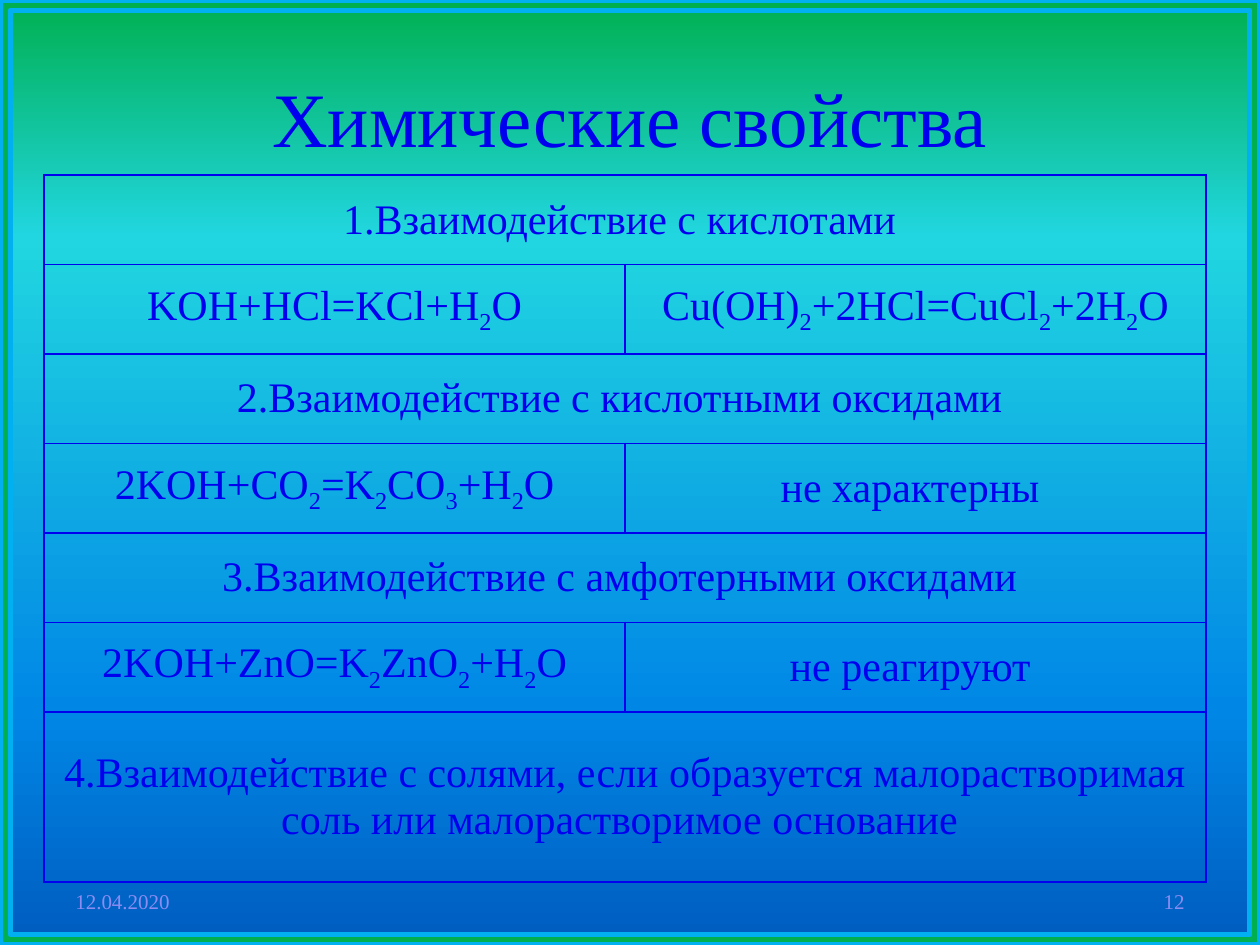
from dataclasses import dataclass

from lxml import etree
from pptx import Presentation
from pptx import util as u
from pptx.dml.color import RGBColor
from pptx.enum import shapes, text
from pptx.oxml import ns

COLORS = {"ink": "0000EE", "muted": "8C8CF2", "frame": "00B050", "edge": "00B0F0"}
GRADIENT = {0: "00B050", 25: "21D6E0", 75: "0087E6", 100: "005CBF"}
FONT = "Times New Roman"
CENTER, LEFT, RIGHT = text.PP_ALIGN.CENTER, text.PP_ALIGN.LEFT, text.PP_ALIGN.RIGHT


@dataclass
class Label:
    words: str
    box: tuple[float, float, float, float]
    size: int
    color: str
    align: text.PP_ALIGN


LABELS = [
    Label("Химические свойства", (0.5, 0.3, 9, 1.25), 44, "ink", CENTER),
    Label("12.04.2020", (0.5, 6.95, 2.33, 0.4), 12, "muted", LEFT),
    Label("12", (7.17, 6.95, 2.33, 0.4), 12, "muted", RIGHT),
]
REACTIONS = [
    ("1.Взаимодействие с кислотами ",),
    ("KOH+HCl=KCl+H_2_O", "Cu(OH)_2_+2HCl=CuCl_2_+2H_2_O"),
    ("2.Взаимодействие с кислотными оксидами ",),
    ("2KOH+CO_2_=K_2_CO_3_+H_2_O", "не характерны "),
    ("3.Взаимодействие с амфотерными оксидами ",),
    ("2KOH+ZnO=K_2_ZnO_2_+H_2_O", "не реагируют "),
    ("4.Взаимодействие с солями, если образуется малорастворимая "
     "соль или малорастворимое основание ",),
]


def rgb(name: str) -> RGBColor:
    """Return the named colour."""
    return RGBColor.from_string(COLORS[name])


def set_attrs(obj, values: dict) -> None:
    """Set every attribute listed in values."""
    for name, value in values.items():
        setattr(obj, name, value)


def write(p, words: str, size: int, color: str, align: text.PP_ALIGN) -> None:
    """Write words as runs, with underscores around each subscript."""
    p.alignment = align
    for i, part in enumerate(words.split("_")):
        r = p.add_run()
        r.text = part
        set_attrs(r.font, {"name": FONT, "size": u.Pt(size), "bold": False})
        r.font.color.rgb = rgb(color)
        if i % 2:
            r.font._element.set("baseline", "-25000")


def add_label(s, label: Label) -> None:
    """Add a text box for one label."""
    tf = s.shapes.add_textbox(*map(u.Inches, label.box)).text_frame
    set_attrs(tf, {"word_wrap": True, "vertical_anchor": text.MSO_ANCHOR.MIDDLE})
    write(tf.paragraphs[0], label.words, label.size, label.color, label.align)


def paint_background(s) -> None:
    """Fill the slide with a vertical gradient."""
    fill = s.background.fill
    fill.gradient()
    fill.gradient_angle = 270
    stops = s._element.find(".//" + ns.qn("a:gsLst"))
    for stop in list(stops):
        stops.remove(stop)
    for percent, color in GRADIENT.items():
        stop = etree.SubElement(stops, ns.qn("a:gs"), pos=str(percent * 1000))
        etree.SubElement(stop, ns.qn("a:srgbClr"), val=color)


def add_frame(s, prs) -> None:
    """Add the border around the slide."""
    sp = s.shapes.add_shape(shapes.MSO_SHAPE.FRAME, 0, 0, prs.slide_width, prs.slide_height)
    sp.adjustments[0] = 0.011
    sp.shadow.inherit = False
    sp.fill.solid()
    sp.fill.fore_color.rgb = rgb("frame")
    sp.line.color.rgb = rgb("edge")
    sp.line.width = u.Pt(3.15)


def format_cell(cell) -> None:
    """Give a cell thin borders, narrow margins and no fill."""
    tc_pr = cell._tc.get_or_add_tcPr()
    for side in "LRTB":
        ln = etree.SubElement(tc_pr, ns.qn(f"a:ln{side}"), w=str(u.Pt(1)))
        solid = etree.SubElement(ln, ns.qn("a:solidFill"))
        etree.SubElement(solid, ns.qn("a:srgbClr"), val=COLORS["ink"])
    cell.fill.background()
    margins = {f"margin_{side}": u.Inches(0.01) for side in ("left", "right", "top", "bottom")}
    set_attrs(cell, {"vertical_anchor": text.MSO_ANCHOR.MIDDLE, **margins})


def add_reactions(s) -> None:
    """Add the table of reactions, with headings across both columns."""
    box = map(u.Inches, (0.35, 1.39, 9.22, 5.61))
    table = s.shapes.add_table(len(REACTIONS), 2, *box).table
    set_attrs(table, {"first_row": False, "horz_banding": False})
    for column in table.columns:
        column.width = u.Inches(4.61)
    for i, entries in enumerate(REACTIONS):
        table.rows[i].height = u.Inches(1.35 if i == len(REACTIONS) - 1 else 0.71)
        for cell in table.rows[i].cells:
            format_cell(cell)
        if len(entries) == 1:
            table.cell(i, 0).merge(table.cell(i, 1))
        for j, words in enumerate(entries):
            write(table.cell(i, j).text_frame.paragraphs[0], words, 24, "ink", CENTER)


def main() -> None:
    """Build and save the slide."""
    prs = Presentation()
    set_attrs(prs, {"slide_width": u.Inches(10), "slide_height": u.Inches(7.5)})
    s = prs.slides.add_slide(prs.slide_layouts[6])
    paint_background(s)
    add_frame(s, prs)
    add_reactions(s)
    for label in LABELS:
        add_label(s, label)
    prs.save("out.pptx")


if __name__ == "__main__":
    main()
